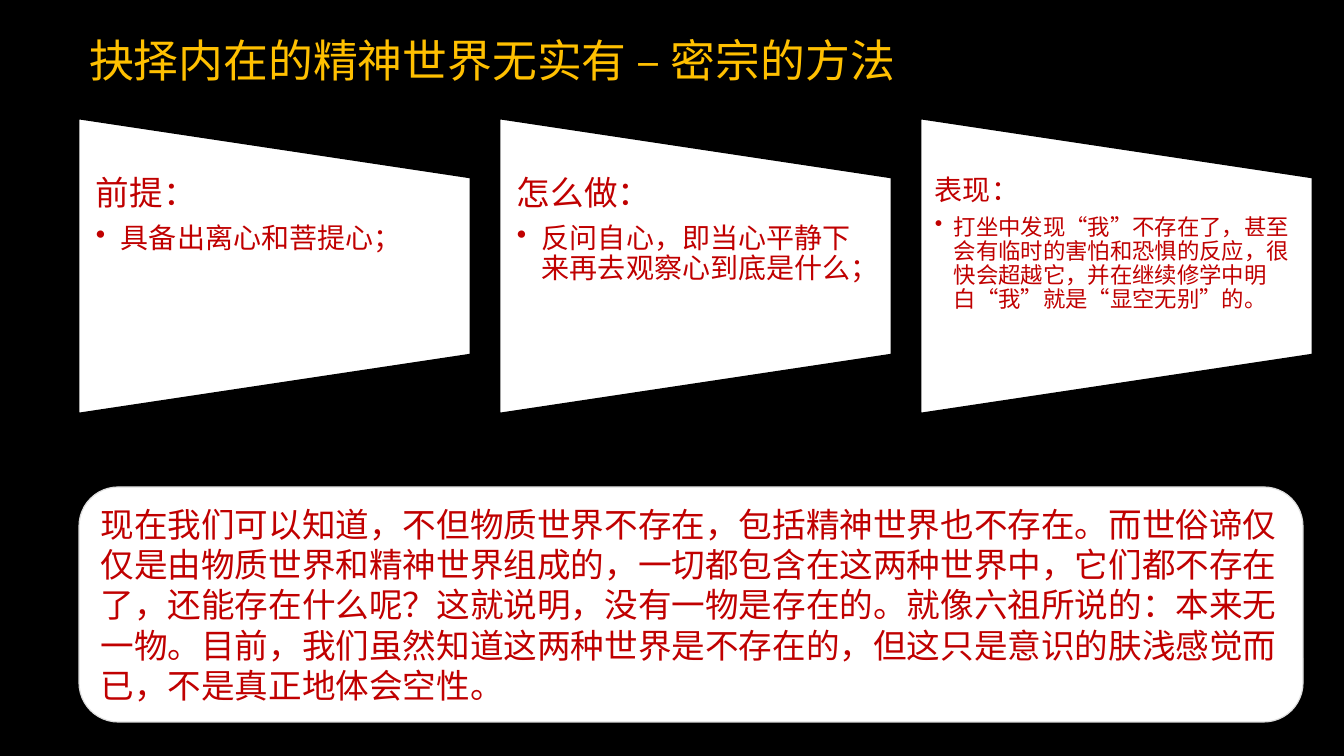
from dataclasses import dataclass

import pptx
import pptx.dml.color
import pptx.enum.lang
import pptx.enum.shapes
import pptx.enum.text
import pptx.oxml
import pptx.oxml.ns
import pptx.util

PX = 914400 / 100.8
SHAPE = pptx.enum.shapes.MSO_SHAPE
ANCHOR = pptx.enum.text.MSO_ANCHOR


@dataclass(frozen=True)
class Theme:
    font: str = "Noto Sans CJK SC"
    background: str = "000000"
    panel: str = "FFFFFF"
    panel_line: str = "000000"
    summary_line: str = "DDDDDD"
    title: str = "FFC000"
    text: str = "C00000"
    title_size: int = 32
    body_size: int = 24


@dataclass(frozen=True)
class Box:
    left: int
    top: int
    width: int
    height: int

    def emu(self) -> list[int]:
        return [round(v * PX) for v in (self.left, self.top, self.width, self.height)]


@dataclass(frozen=True)
class Card:
    heading: str
    bullet: str
    heading_size: int = 24
    bullet_size: int = 20
    inset: int = 17
    indent: int = 25


THEME = Theme()
TITLE = "抉择内在的精神世界无实有 – 密宗的方法"
CARDS = [
    Card("前提：", "具备出离心和菩提心；"),
    Card("怎么做：", "反问自心，即当心平静下来再去观察心到底是什么；"),
    Card("表现：", "打坐中发现“我”不存在了，甚至会有临时的害怕和恐惧的反应，很快会超越它，"
         "并在继续修学中明白“我”就是“显空无别”的。", 20, 16, 14, 19),
]
SUMMARY = (
    "现在我们可以知道，不但物质世界不存在，包括精神世界也不存在。"
    "而世俗谛仅仅是由物质世界和精神世界组成的，一切都包含在这两种世界中，"
    "它们都不存在了，还能存在什么呢？这就说明，没有一物是存在的。"
    "就像六祖所说的：本来无一物。目前，我们虽然知道这两种世界是不存在的，"
    "但这只是意识的肤浅感觉而已，不是真正地体会空性。"
)
FIRST_CARD = Box(79, 118, 392, 295)
CARD_STEP = 421
CARD_TEXT_TOP, CARD_TEXT_HEIGHT = 176, 177


def rgb(value: str) -> pptx.dml.color.RGBColor:
    return pptx.dml.color.RGBColor.from_string(value)


def add_run(p, text: str, size: int, color: str) -> None:
    r = p.add_run()
    r.text = text
    r.font.size = pptx.util.Pt(size)
    r.font.color.rgb = rgb(color)
    r.font.name = THEME.font
    r.font.language_id = pptx.enum.lang.MSO_LANGUAGE_ID.SIMPLIFIED_CHINESE
    ea = pptx.oxml.parse_xml(
        f'<a:ea {pptx.oxml.ns.nsdecls("a")} typeface="{THEME.font}"/>')
    r.font.fill  # fill precedes the font elements
    p.runs[-1]._r.get_or_add_rPr().append(ea)


def set_frame(tf, anchor, inset_x: int, inset_y: int) -> None:
    tf.word_wrap = True
    tf.vertical_anchor = anchor
    tf.margin_left = tf.margin_right = round(inset_x * PX)
    tf.margin_top = tf.margin_bottom = round(inset_y * PX)


def add_bullet(p, indent: int) -> None:
    pPr = p._p.get_or_add_pPr()
    pPr.set("marL", str(round(indent * PX)))
    pPr.set("indent", str(-round(indent * PX)))
    pPr.append(pptx.oxml.parse_xml(
        f'<a:buChar {pptx.oxml.ns.nsdecls("a")} char="•"/>'))


def add_panel(s, kind, box: Box, line: str, width: float):
    sp = s.shapes.add_shape(kind, *box.emu())
    sp.shadow.inherit = False
    sp.fill.solid()
    sp.fill.fore_color.rgb = rgb(THEME.panel)
    sp.line.color.rgb = rgb(line)
    sp.line.width = pptx.util.Pt(width)
    return sp


def add_title(s) -> None:
    tf = s.shapes.add_textbox(*Box(76, 25, 1167, 68).emu()).text_frame
    set_frame(tf, ANCHOR.BOTTOM, 13, 7)
    p = tf.paragraphs[0]
    p.line_spacing = 0.8
    add_run(p, TITLE, THEME.title_size, THEME.title)


def add_card(s, card: Card, left: int) -> None:
    # Trapezoid, turned a quarter about its centre
    width, height = FIRST_CARD.width, FIRST_CARD.height
    shift = (width - height) // 2
    upright = Box(left + shift, FIRST_CARD.top - shift, height, width)
    sp = add_panel(s, SHAPE.FLOWCHART_MANUAL_OPERATION, upright, THEME.panel_line, 1.2)
    sp.rotation = 270

    # Heading and bullet
    box = Box(left, CARD_TEXT_TOP, width, CARD_TEXT_HEIGHT)
    tf = s.shapes.add_textbox(*box.emu()).text_frame
    set_frame(tf, ANCHOR.TOP, card.inset, 0)
    p = tf.paragraphs[0]
    p.line_spacing = 0.9
    p.space_after = pptx.util.Pt(card.heading_size * 0.35)
    add_run(p, card.heading, card.heading_size, THEME.text)
    p = tf.add_paragraph()
    p.level = 1
    p.line_spacing = 0.9
    add_bullet(p, card.indent)
    add_run(p, card.bullet, card.bullet_size, THEME.text)


def add_summary(s) -> None:
    sp = add_panel(s, SHAPE.ROUNDED_RECTANGLE, Box(79, 487, 1224, 235),
                   THEME.summary_line, 0.85)
    set_frame(sp.text_frame, ANCHOR.MIDDLE, 10, 5)
    p = sp.text_frame.paragraphs[0]
    p.alignment = pptx.enum.text.PP_ALIGN.LEFT
    add_run(p, SUMMARY, THEME.body_size, THEME.text)


def main() -> None:
    prs = pptx.Presentation()
    prs.slide_width, prs.slide_height = round(1344 * PX), round(756 * PX)
    s = prs.slides.add_slide(prs.slide_layouts[6])
    s.background.fill.solid()
    s.background.fill.fore_color.rgb = rgb(THEME.background)

    add_title(s)
    for i, card in enumerate(CARDS):
        add_card(s, card, FIRST_CARD.left + i * CARD_STEP)
    add_summary(s)
    prs.save("out.pptx")


if __name__ == "__main__":
    main()
